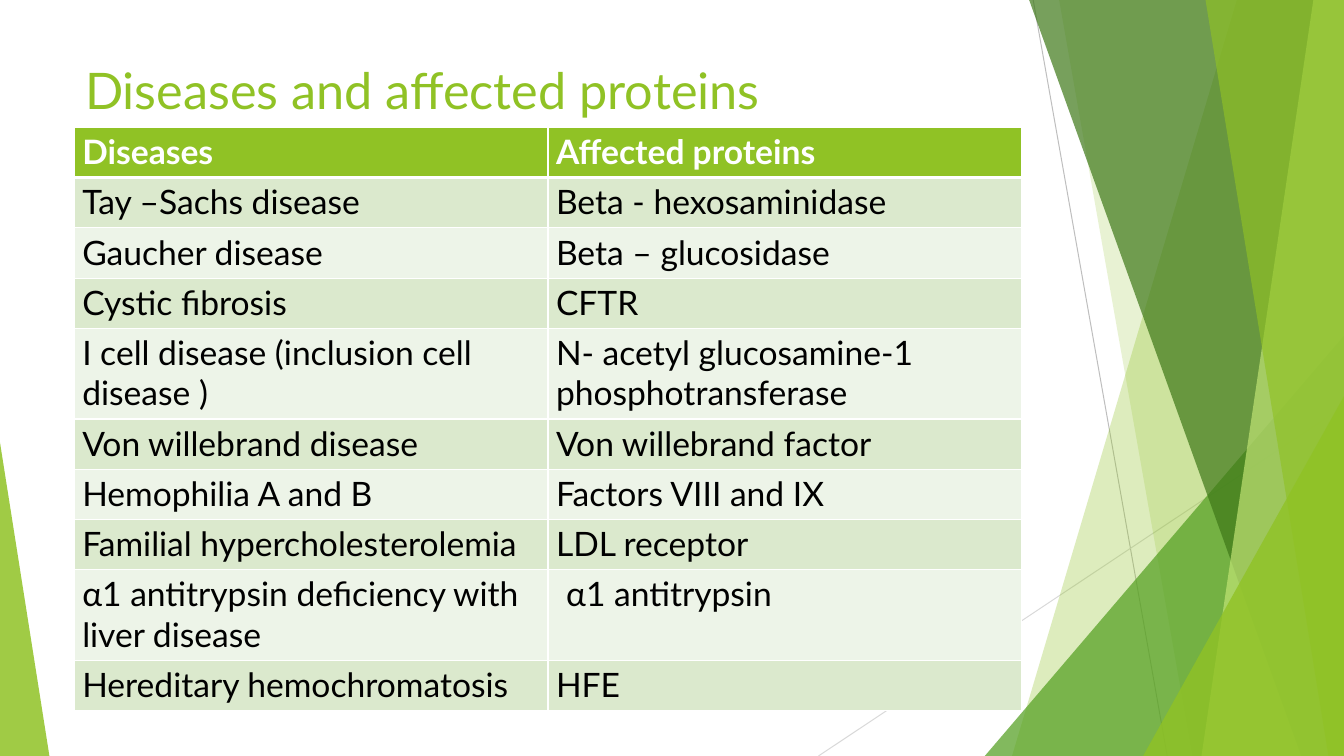
from lxml import etree
from pptx import Presentation
from pptx import util as u
from pptx.dml.color import RGBColor
from pptx.enum import shapes, text
from pptx.oxml.ns import qn

Pt = u.Pt
WIDTH, HEIGHT = 960, 540
GREEN, WHITE, BLACK = "90C225", "FFFFFF", "000000"
BANDS = ("EDF4E8", "DBE9CD")

# Thin lines: start, end, colour
THIN_LINES = [
    ((738, 0), (833.76, 540), "BEBEBE"),
    ((960, 290.16), (584.64, 540), "D9D9D9"),
]

# Facets: corner points, colour, opacity in percent
RIGHT_EDGE = [(WIDTH, HEIGHT), (WIDTH, 0)]
FACETS = [
    ([(883.44, 0), (722.88, 540)] + RIGHT_EDGE, GREEN, 30),
    ([(756.5, 0), (851.76, 540)] + RIGHT_EDGE, GREEN, 20),
    ([(960, 239.76), (703.44, 540), (960, 540)], "539F20", 72),
    ([(735.12, 0), (929.52, 540)] + RIGHT_EDGE, "3E7818", 70),
    ([(938.16, 0), (858.24, 540)] + RIGHT_EDGE, "C0E374", 70),
    ([(861.12, 0), (948.96, 540)] + RIGHT_EDGE, GREEN, 65),
    ([(960, 282.96), (816.48, 540), (960, 540)], GREEN, 80),
    ([(0, 316.08), (0, 540), (35.28, 540)], GREEN, 85),
]

ROWS = [
    ("Diseases", "Affected proteins"),
    ("Tay –Sachs disease", "Beta - hexosaminidase"),
    ("Gaucher disease", "Beta – glucosidase"),
    ("Cystic fibrosis", "CFTR"),
    ("I cell disease (inclusion cell disease )",
     "N- acetyl glucosamine-1 phosphotransferase"),
    ("Von willebrand disease", "Von willebrand factor"),
    ("Hemophilia A and B", "Factors VIII and IX"),
    ("Familial hypercholesterolemia", "LDL receptor"),
    ("α1 antitrypsin deficiency with\nliver disease", "α1 antitrypsin"),
    ("Hereditary hemochromatosis", "HFE"),
]
TALL_ROWS = (4, 8)
INDENTED_CELL = (8, 1)


def color(code):
    return RGBColor.from_string(code)


def apply(target, values):
    for name, value in values.items():
        setattr(target, name, value)


def write(frame, words, size, code, before, bold=False):
    for number, line in enumerate(words.split("\n")):
        para = frame.add_paragraph() if number else frame.paragraphs[0]
        para.space_before = Pt(0 if number else before)
        span = para.add_run()
        span.text = line
        apply(span.font, {"name": "Lato", "size": Pt(size), "bold": bold})
        span.font.color.rgb = color(code)


def add_thin_line(page, start, end, code):
    line = page.shapes.add_connector(
        shapes.MSO_CONNECTOR.STRAIGHT, *(Pt(value) for value in start + end))
    line.line.color.rgb = color(code)
    line.line.width = Pt(0.72)
    etree.SubElement(line._element.spPr, qn("a:effectLst"))


def add_facet(page, points, code, opacity):
    corners = [(Pt(x), Pt(y)) for x, y in points]
    builder = page.shapes.build_freeform(*corners[0])
    builder.add_line_segments(corners[1:], close=True)
    facet = builder.convert_to_shape()
    facet.shadow.inherit = False
    facet.line.fill.background()
    facet.fill.solid()
    facet.fill.fore_color.rgb = color(code)
    fill_color = facet._element.spPr.find(qn("a:solidFill"))[0]
    etree.SubElement(fill_color, qn("a:alpha"), val=str(opacity * 1000))


def add_title(page, words):
    box = page.shapes.add_textbox(Pt(59.76), Pt(41), Pt(496), Pt(45.4))
    apply(box.text_frame, {
        "word_wrap": True, "margin_left": Pt(1), "margin_top": Pt(1),
        "margin_right": 0, "margin_bottom": 0})
    write(box.text_frame, words, 36, GREEN, 1)


def add_borders(cell, widths):
    properties = cell._tc.get_or_add_tcPr()
    for side, width in widths.items():
        border = etree.SubElement(
            properties, qn(f"a:ln{side}"), w=str(Pt(width)))
        fill = etree.SubElement(border, qn("a:solidFill"))
        etree.SubElement(fill, qn("a:srgbClr"), val=WHITE)


def add_disease_table(page):
    heights = [64.8 if row in TALL_ROWS else 35.9 for row in range(len(ROWS))]
    table = page.shapes.add_table(
        len(ROWS), 2, Pt(53), Pt(91), Pt(676.8), Pt(sum(heights))).table
    for column in table.columns:
        column.width = Pt(338.4)
    for row, entries in enumerate(ROWS):
        table.rows[row].height = Pt(heights[row])
        header = row == 0
        for column, words in enumerate(entries):
            cell = table.cell(row, column)
            apply(cell, {
                "margin_left": Pt(13 if (row, column) == INDENTED_CELL else 5.76),
                "margin_top": Pt(2.9), "margin_right": 0, "margin_bottom": 0,
                "vertical_anchor": text.MSO_ANCHOR.TOP})
            add_borders(cell, {"L": 1, "R": 1, "T": 3 if row == 1 else 1,
                               "B": 3 if header else 1})
            cell.fill.solid()
            cell.fill.fore_color.rgb = color(GREEN if header else BANDS[row % 2])
            write(cell.text_frame, words, 24, WHITE if header else BLACK, 3, header)


def main():
    deck = Presentation()
    apply(deck, {"slide_width": Pt(WIDTH), "slide_height": Pt(HEIGHT)})
    page = deck.slides.add_slide(deck.slide_layouts[6])
    # Background decoration
    for line in THIN_LINES:
        add_thin_line(page, *line)
    for facet in FACETS:
        add_facet(page, *facet)
    # Content
    add_title(page, "Diseases and affected proteins")
    add_disease_table(page)
    deck.save("out.pptx")


if __name__ == "__main__":
    main()
